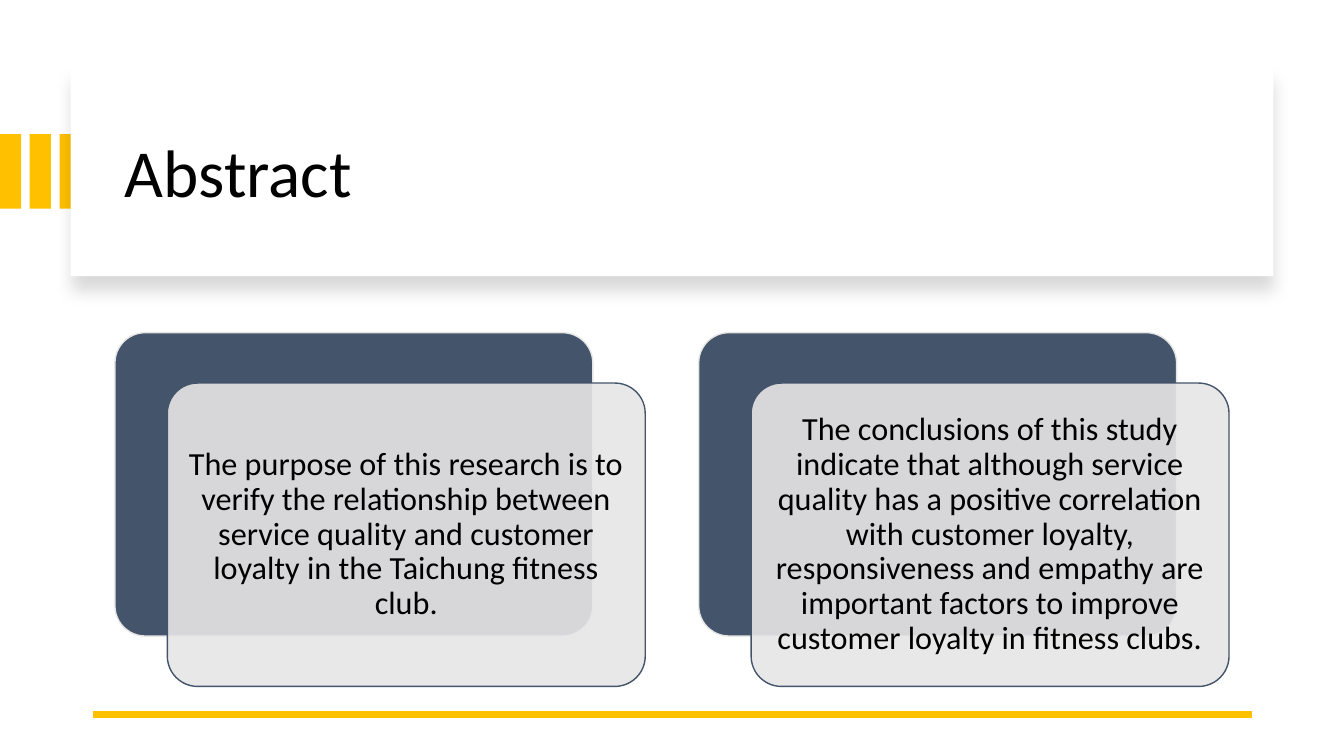
import pptx
import pptx.dml.color
import pptx.enum.shapes
import pptx.enum.text
import pptx.oxml.ns
import pptx.util
from lxml import etree
from pptx.util import Inches

COLORS = {
    "accent": "FFC000",
    "white": "FFFFFF",
    "black": "000000",
    "navy": "44546A",
    "light": "E7E6E6",
}
FONT = "Calibri"
SHAPES = pptx.enum.shapes.MSO_SHAPE
ALIGN = pptx.enum.text.PP_ALIGN
CARD_TEXTS = [
    "The purpose of this research is to verify the relationship between "
    "service quality and customer loyalty in the Taichung fitness club.",
    "The conclusions of this study indicate that although service quality "
    "has a positive correlation with customer loyalty, responsiveness and "
    "empathy are important factors to improve customer loyalty in fitness clubs.",
]


def color(name):
    return pptx.dml.color.RGBColor.from_string(COLORS[name])


def add_element(parent, tag, **attributes):
    element = etree.SubElement(parent, pptx.oxml.ns.qn(tag))
    for key, value in attributes.items():
        element.set(key, str(value))
    return element


def add_box(slide, kind, left, top, width, height, fill, line=None):
    shape = slide.shapes.add_shape(
        kind, Inches(left), Inches(top), Inches(width), Inches(height))
    shape.fill.solid()
    shape.fill.fore_color.rgb = color(fill)
    if line:
        shape.line.color.rgb = color(line)
        shape.line.width = pptx.util.Pt(1)
    else:
        shape.line.fill.background()
    shape.shadow.inherit = False
    return shape


def add_soft_shadow(shape):
    effects = shape.element.spPr.find(pptx.oxml.ns.qn("a:effectLst"))
    shadow = add_element(
        effects, "a:outerShdw", blurRad=int(pptx.util.Pt(11)),
        dist=int(pptx.util.Pt(10)), dir=90 * 60000, algn="t", rotWithShape=0)
    shade = add_element(shadow, "a:srgbClr", val=COLORS["black"])
    add_element(shade, "a:alpha", val=15000)


def add_text(slide, text, left, top, width, height, size, alignment, inset):
    box = slide.shapes.add_textbox(
        Inches(left), Inches(top), Inches(width), Inches(height))
    frame = box.text_frame
    frame.word_wrap = True
    frame.vertical_anchor = pptx.enum.text.MSO_ANCHOR.MIDDLE
    frame.margin_left = frame.margin_right = Inches(0.1)
    frame.margin_top = frame.margin_bottom = Inches(inset)
    paragraph = frame.paragraphs[0]
    paragraph.alignment = alignment
    paragraph.line_spacing = 0.9
    run = paragraph.add_run()
    run.text = text
    run.font.name = FONT
    run.font.size = pptx.util.Pt(size)
    run.font.color.rgb = color("black")


def add_rule(slide, start, end, top):
    rule = slide.shapes.add_connector(
        pptx.enum.shapes.MSO_CONNECTOR.STRAIGHT,
        Inches(start), Inches(top), Inches(end), Inches(top))
    rule.line.color.rgb = color("accent")
    rule.line.width = pptx.util.Pt(4.5)
    add_element(rule.element.spPr, "a:effectLst")


def add_card(slide, left, top, text):
    width, height = 4.74, 3.01
    back = add_box(slide, SHAPES.ROUNDED_RECTANGLE,
                   left, top, width, height, "navy", "light")
    front = add_box(slide, SHAPES.ROUNDED_RECTANGLE,
                    left + 0.52, top + 0.5, width, height, "light", "navy")
    for panel in (back, front):
        panel.adjustments[0] = 0.1
    # Let the back panel show through the front one
    fill = front.element.spPr.find(pptx.oxml.ns.qn("a:solidFill"))
    add_element(fill[0], "a:alpha", val=90000)
    add_text(slide, text, left + 0.61, top + 0.59, width - 0.18,
             height - 0.18, 23, ALIGN.CENTER, 0.1)


def main():
    presentation = pptx.Presentation()
    presentation.slide_width = Inches(13.33)
    presentation.slide_height = Inches(7.5)
    slide = presentation.slides.add_slide(presentation.slide_layouts[6])

    # Accent bars at the left edge
    for index in range(3):
        add_box(slide, SHAPES.RECTANGLE, index * 0.295, 1.33, 0.21, 0.74, "accent")

    # Title panel
    panel = add_box(slide, SHAPES.RECTANGLE, 0.7, 0.67, 11.93, 2.07, "white")
    add_soft_shadow(panel)
    add_text(slide, "Abstract", 1.14, 0.89, 11.13, 1.7, 48, ALIGN.LEFT, 0.05)

    # Bottom rule
    add_rule(slide, 12.42, 0.92, 7.09)

    # Cards
    for index, text in enumerate(CARD_TEXTS):
        add_card(slide, 1.14 + index * 5.79, 3.3, text)

    presentation.save("out.pptx")


if __name__ == "__main__":
    main()
